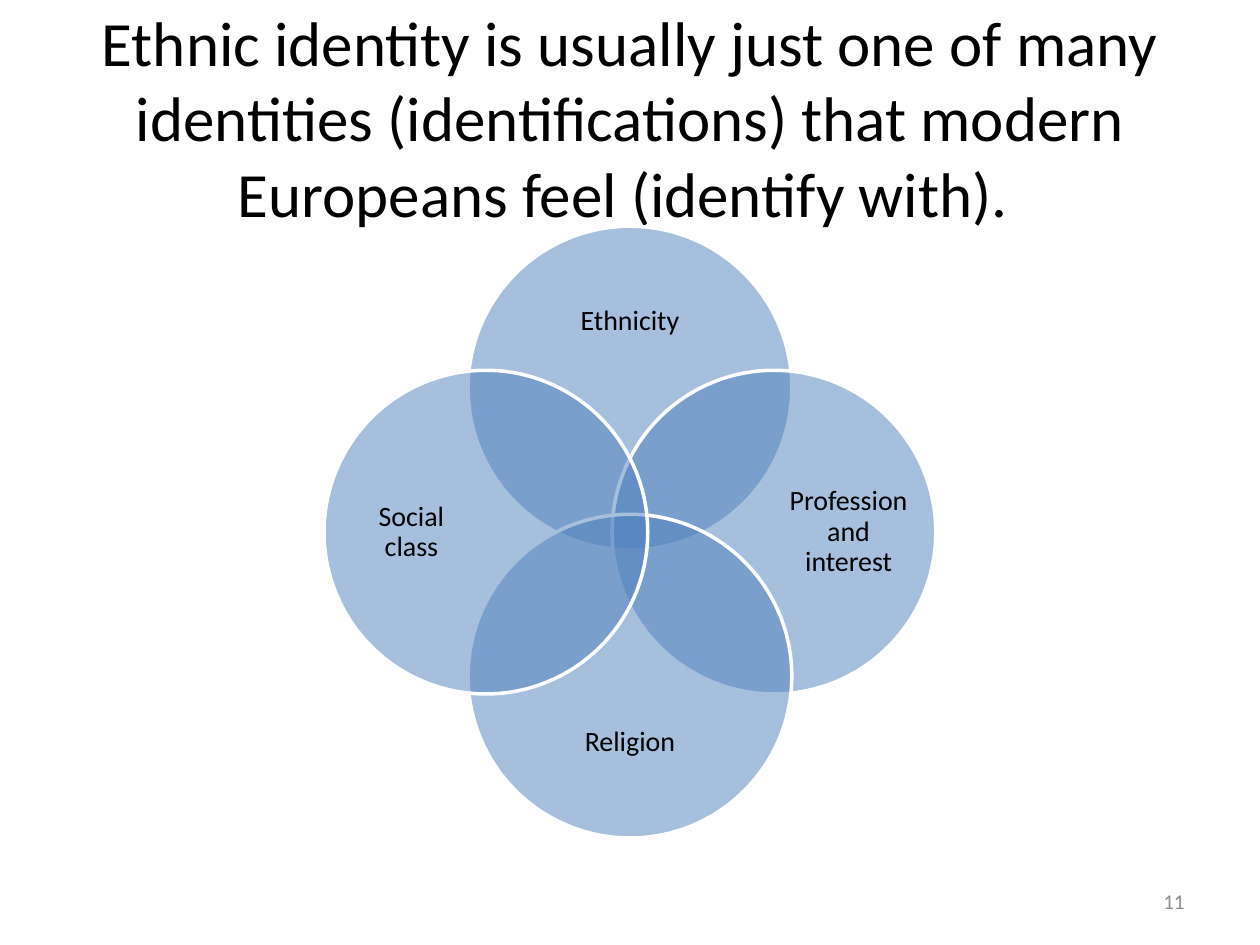
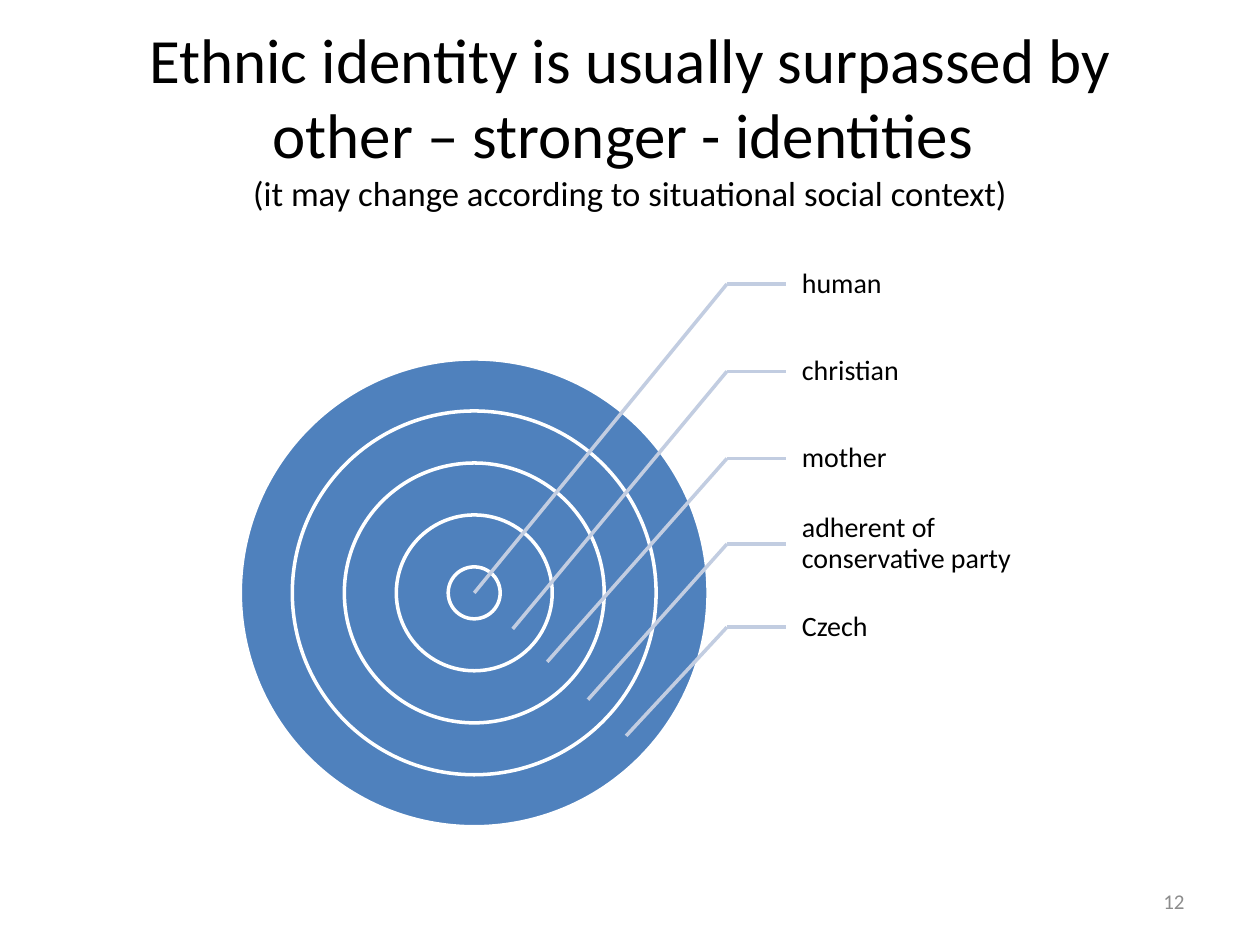
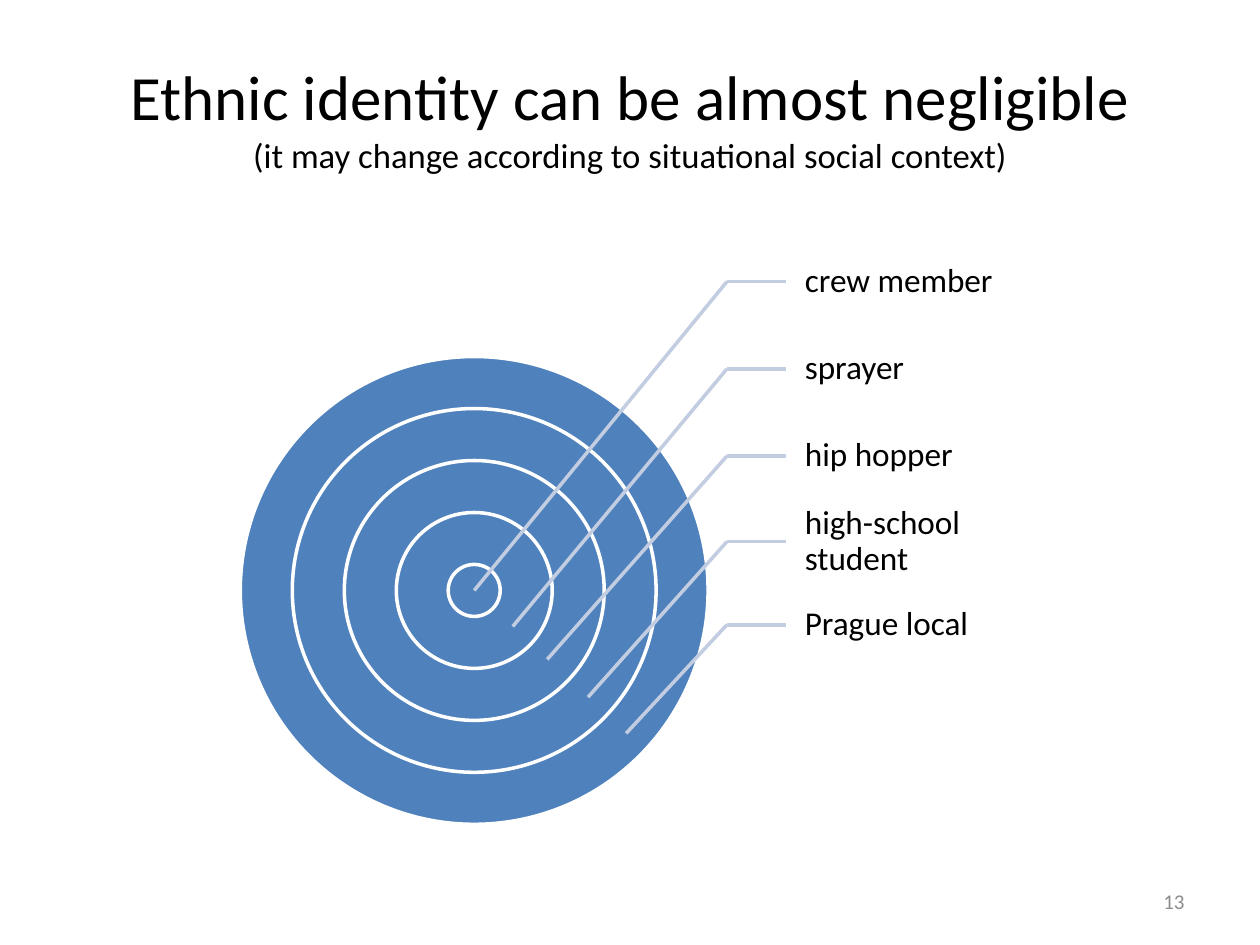
import pptx
import pptx.dml.color
import pptx.enum.shapes
import pptx.enum.text
import pptx.oxml.ns
import pptx.util
from lxml import etree

Pt = pptx.util.Pt
ALIGN = pptx.enum.text.PP_ALIGN
FONT = "Calibri"
COLORS = {
    "text": "000000",
    "number": "8C8C8C",
    "disc": "4F81BD",
    "edge": "FFFFFF",
    "leader": "C2CDE1",
}
CONTEXT = "(it may change according to situational social context)"

# Row height and leader tip (x, y) of each label, from the centre of the rings
LEADERS = [
    (-176.5, 0, 0),
    (-126.6, 22, 20.6),
    (-76.8, 41.7, 39.4),
    (-27.9, 65, 61),
    (19.6, 86.8, 81.7),
]


def color(name):
    return pptx.dml.color.RGBColor.from_string(COLORS[name])


def add_text(slide, box, lines, align=ALIGN.LEFT, tone="text", insets=None, spacing=None):
    """Add a middle-anchored text box; lines holds (text, size) pairs."""
    frame = slide.shapes.add_textbox(*map(Pt, box)).text_frame
    frame.word_wrap = True
    frame.vertical_anchor = pptx.enum.text.MSO_ANCHOR.MIDDLE
    if insets:
        (frame.margin_left, frame.margin_top,
         frame.margin_right, frame.margin_bottom) = map(Pt, insets)
    frame.text = "\n".join(text for text, size in lines)
    for para, (text, size) in zip(frame.paragraphs, lines):
        para.alignment = align
        if spacing:
            para.line_spacing = spacing
        for run in para.runs:
            run.font.name = FONT
            run.font.size = Pt(size)
            run.font.color.rgb = color(tone)


def add_disc(slide, x, y, size, alpha=None):
    """Add a circle centred on x, y; alpha is its opacity in percent."""
    disc = slide.shapes.add_shape(
        pptx.enum.shapes.MSO_SHAPE.OVAL,
        Pt(x - size / 2), Pt(y - size / 2), Pt(size), Pt(size))
    disc.shadow.inherit = False
    disc.fill.solid()
    disc.fill.fore_color.rgb = color("disc")
    disc.line.color.rgb = color("edge")
    disc.line.width = Pt(2)
    if alpha:
        tint = disc.fill._xPr.find(".//" + pptx.oxml.ns.qn("a:srgbClr"))
        etree.SubElement(tint, pptx.oxml.ns.qn("a:alpha"), val=str(alpha * 1000))


def add_line(slide, x1, y1, x2, y2):
    line = slide.shapes.add_connector(
        pptx.enum.shapes.MSO_CONNECTOR.STRAIGHT, Pt(x1), Pt(y1), Pt(x2), Pt(y2))
    line.line.color.rgb = color("leader")
    line.line.width = Pt(2)
    etree.SubElement(line._element.spPr, pptx.oxml.ns.qn("a:effectLst"))


def add_slide(deck, number, title, note=None):
    slide = deck.slides.add_slide(deck.slide_layouts[6])
    add_text(slide, (516, 500.5, 168, 28.75), [(str(number), 12)],
             ALIGN.RIGHT, tone="number")
    lines = [(title, 36)] + ([(note, 19.8)] if note else [])
    add_text(slide, (36, 21.6, 648, 90), lines, ALIGN.CENTER)
    return slide


def add_venn(slide, labels):
    """Draw four overlapping circles, clockwise from the top."""
    mid_x, mid_y, size, shift = 360, 304.1, 185, 82.3
    sides = [(0, -1), (1, 0), (0, 1), (-1, 0)]
    for label, (dx, dy) in zip(labels, sides):
        add_disc(slide, mid_x + dx * shift, mid_y + dy * shift, size, alpha=50)
        wide, high = (71.3, 142.5) if dx else (142.5, 59)
        x, y = mid_x + dx * 124.9, mid_y + dy * 120.2
        add_text(slide, (x - wide / 2, y - high / 2, wide, high), [(label, 16)],
                 ALIGN.CENTER, insets=(0, 0, 0, 0), spacing=0.9)


def add_target(slide, mid_y, labels, size):
    """Draw nested rings with one label and bent leader for each."""
    mid_x, core, bend, edge, high = 271, 29.7, 415.4, 449.3, 47.5
    for ring in reversed(range(len(labels))):
        add_disc(slide, mid_x, mid_y, core * (2 * ring + 1))
    pad = size * 0.1
    for label, (row, tip_x, tip_y) in zip(labels, LEADERS):
        y = mid_y + row
        add_text(slide, (edge, y - high / 2, 134, high), [(label, size)],
                 insets=(size * 0.56, pad, pad, pad), spacing=0.9)
        add_line(slide, bend, y, edge, y)
        add_line(slide, bend, y, mid_x + tip_x, mid_y + tip_y)


def main():
    deck = pptx.Presentation()
    deck.slide_width, deck.slide_height = Pt(720), Pt(540)

    slide = add_slide(deck, 11, "Ethnic identity is usually just one of many identities "
                      "(identifications) that modern Europeans feel (identify with). ")
    add_venn(slide, ["Ethnicity", "Profession and interest", "Religion", "Social class"])

    slide = add_slide(deck, 12, "Ethnic identity is usually surpassed by other – "
                      "stronger - identities ", CONTEXT)
    add_target(slide, 338.8, ["human", "christian", "mother",
                              "adherent of conservative party", "Czech"], 16)

    slide = add_slide(deck, 13, "Ethnic identity can be almost negligible", CONTEXT)
    add_target(slide, 337.4, ["crew member", "sprayer", "hip hopper",
                              "high-school student", "Prague local"], 19)

    deck.save("out.pptx")


if __name__ == "__main__":
    main()
